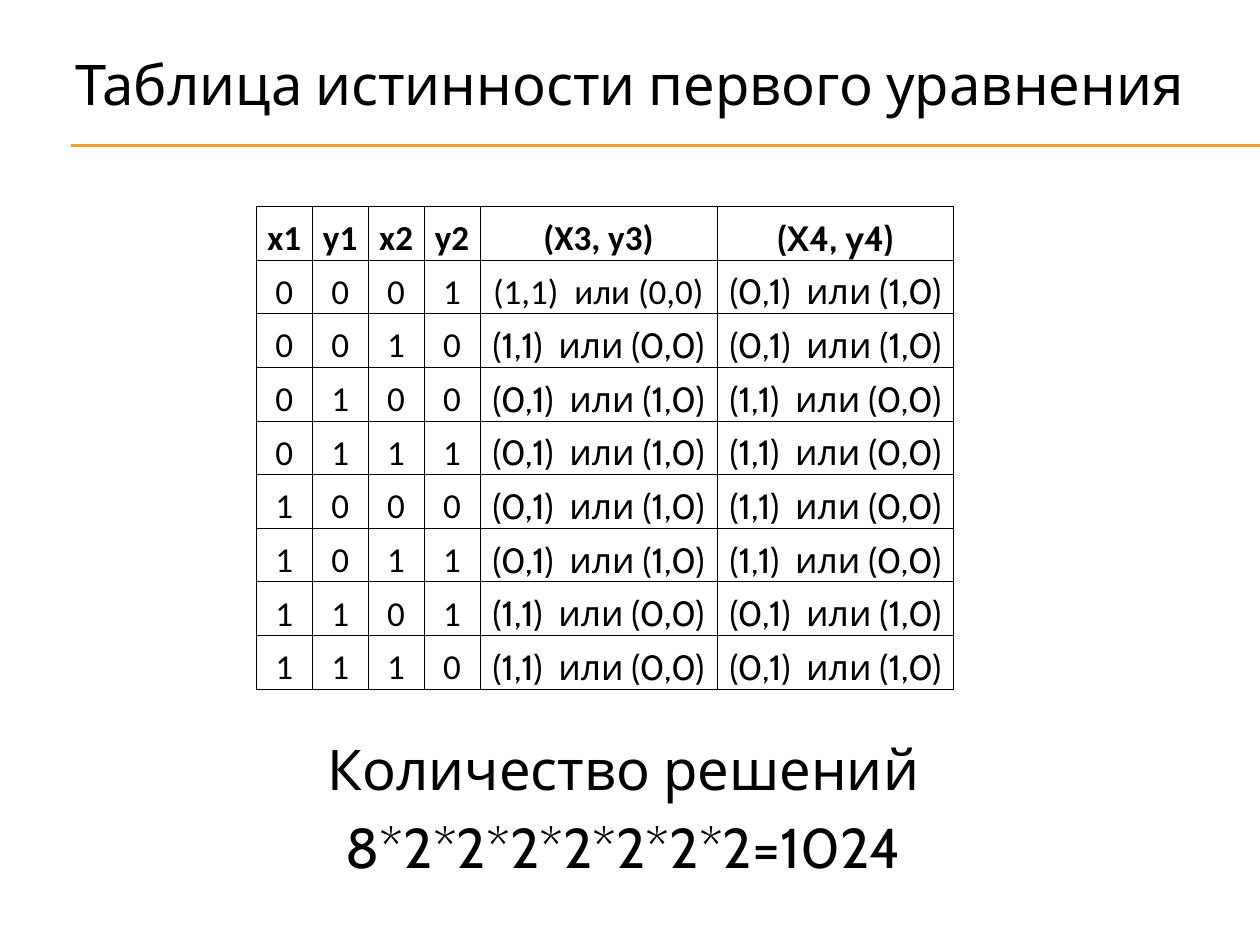
from itertools import product

from pptx import Presentation
from pptx.dml.color import RGBColor
from pptx.enum.shapes import MSO_CONNECTOR
from pptx.enum.text import MSO_ANCHOR, MSO_AUTO_SIZE, PP_ALIGN
from pptx.oxml.ns import qn
from pptx.util import Pt
from lxml.etree import SubElement

COLORS = {"text": "000000", "border": "000000", "rule": "F0A22E"}
EQUAL, DIFFERENT = "(1,1)  или (0,0)", "(0,1)  или (1,0)"
HEADER = ["x1", "y1", "x2", "y2", "(X3, y3)", "(X4, y4)"]
COL_WIDTHS = [32] * 4 + [135.4] * 2
ROW_HEIGHT = 30.67


def truth_rows():
    """Rows whose four bits hold an odd number of ones; later pairs alternate."""
    rows = []
    for bits in product((0, 1), repeat=4):
        if sum(bits) % 2:
            pairs = [EQUAL, DIFFERENT]
            if bits[0] != bits[1]:
                pairs.reverse()
            rows.append([str(bit) for bit in bits] + pairs)
    return rows


def add_run(p, text, size, font="Cabin", bold=False):
    p.alignment = PP_ALIGN.CENTER
    r = p.add_run()
    r.text = text
    r.font.size = Pt(size)
    r.font.name = font
    r.font.bold = bold
    r.font.color.rgb = RGBColor.from_string(COLORS["text"])


def set_title(s, text):
    sp = s.shapes.title
    sp.left, sp.top, sp.width, sp.height = Pt(36), Pt(21.6), Pt(648), Pt(52)
    tf = sp.text_frame
    tf.auto_size = MSO_AUTO_SIZE.NONE
    tf.vertical_anchor = MSO_ANCHOR.MIDDLE
    tf.margin_left = tf.margin_right = 0
    add_run(tf.paragraphs[0], text, 32)


def add_rule(s, y):
    line = s.shapes.add_connector(MSO_CONNECTOR.STRAIGHT, Pt(40.5), Pt(y), Pt(720), Pt(y))
    line.line.color.rgb = RGBColor.from_string(COLORS["rule"])
    line.line.width = Pt(0.75)
    SubElement(line._element.spPr, qn("a:effectLst"))


def set_borders(cell):
    tc_pr = cell._tc.get_or_add_tcPr()
    for side in ("lnL", "lnR", "lnT", "lnB"):
        ln = SubElement(tc_pr, qn(f"a:{side}"), w=str(Pt(0.5)))
        fill = SubElement(ln, qn("a:solidFill"))
        SubElement(fill, qn("a:srgbClr"), val=COLORS["border"])


def format_cell(cell, text, font, bold):
    cell.margin_left = cell.margin_right = cell.margin_top = Pt(0.7)
    cell.margin_bottom = 0
    cell.vertical_anchor = MSO_ANCHOR.BOTTOM
    set_borders(cell)
    cell.fill.background()
    add_run(cell.text_frame.paragraphs[0], text, 20, font, bold)


def add_truth_table(s):
    rows = [HEADER] + truth_rows()
    table = s.shapes.add_table(
        len(rows), len(HEADER), Pt(146.4), Pt(118),
        Pt(sum(COL_WIDTHS)), Pt(ROW_HEIGHT * len(rows))).table
    table.first_row = table.horz_banding = False
    for column, width in zip(table.columns, COL_WIDTHS):
        column.width = Pt(width)
    for i, row in enumerate(rows):
        table.rows[i].height = Pt(ROW_HEIGHT)
        for j, text in enumerate(row):
            # The pair columns use Cabin, apart from the top of the first one
            font = "Cabin" if j == 5 or (j == 4 and i > 1) else "Calibri"
            format_cell(table.cell(i, j), text, font, bold=i == 0)


def add_answer(s, lines):
    tf = s.shapes.add_textbox(Pt(39.6), Pt(416.2), Pt(633.6), Pt(93.6)).text_frame
    tf.word_wrap = True
    for i, text in enumerate(lines):
        p = tf.add_paragraph() if i else tf.paragraphs[0]
        p.space_before = Pt(6.4)
        p_pr = p._p.get_or_add_pPr()
        p_pr.set("marL", str(Pt(27)))
        p_pr.set("indent", str(Pt(-27)))
        add_run(p, text, 32)


def main():
    prs = Presentation()
    prs.slide_width, prs.slide_height = Pt(720), Pt(540)
    s = prs.slides.add_slide(prs.slide_layouts[5])
    for y in (82.8, 83.4):
        add_rule(s, y)
    add_truth_table(s)
    set_title(s, "Таблица истинности первого уравнения")
    add_answer(s, ["Количество решений", "8*2*2*2*2*2*2*2=1024"])
    prs.save("out.pptx")


if __name__ == "__main__":
    main()
